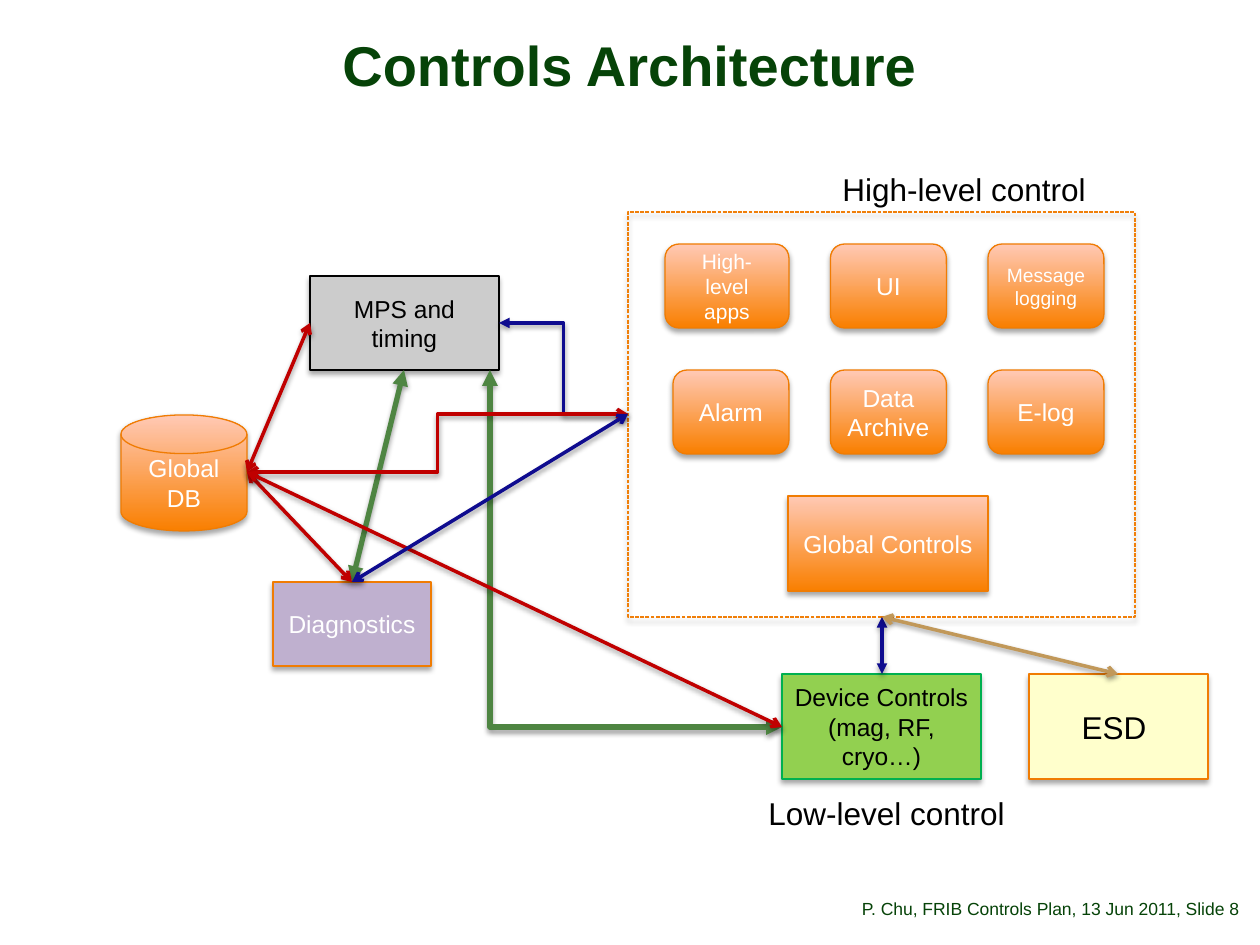
from dataclasses import dataclass

from lxml import etree
from pptx import Presentation
from pptx import util as u
from pptx.dml.color import RGBColor
from pptx.enum import dml, shapes, text
from pptx.oxml.ns import qn
from pptx.slide import Slide

PX_PER_INCH = 126
KIND = shapes.MSO_SHAPE
ALIGN = text.PP_ALIGN
ANCHOR = text.MSO_ANCHOR

ORANGE, BLACK, WHITE = "F07C03", "000000", "FFFFFF"
NAVY, GREEN, RED, TAN = "0F0C8F", "4E8542", "C00000", "C19859"
TITLE_GREEN = "064308"
GLOW = ("F97F00", "FFC9B5")


def px(length):
    return u.Inches(length / PX_PER_INCH)


def rgb(value):
    return RGBColor.from_string(value)


def assign(target, values):
    for name, value in values.items():
        setattr(target, name, value)


def add_shadow(item, alpha, distance):
    effects = etree.SubElement(item._element.spPr, qn("a:effectLst"))
    shadow = etree.SubElement(
        effects, qn("a:outerShdw"), blurRad=str(u.Pt(3.1)),
        dist=str(u.Pt(distance)), dir="5400000", rotWithShape="0")
    color = etree.SubElement(shadow, qn("a:srgbClr"), val=BLACK)
    etree.SubElement(color, qn("a:alpha"), val=str(alpha * 1000))


@dataclass
class Diagram:
    """Holds the text style and the slide being drawn."""

    slide: Slide
    font: str = "Arial"

    def fill_text(self, frame, words, size, color, bold=False, spacing=None,
                  align=ALIGN.CENTER, **frame_format):
        assign(frame, frame_format)
        paragraph = frame.paragraphs[0]
        assign(paragraph, {"alignment": align, "line_spacing": spacing})
        run = paragraph.add_run()
        run.text = words
        assign(run.font, {"name": self.font, "size": u.Pt(size), "bold": bold})
        run.font.color.rgb = rgb(color)

    def label(self, words, left, top, width, height, size=18, color=BLACK,
              margins=None, **text_format):
        box = self.slide.shapes.add_textbox(*map(px, (left, top, width, height)))
        sides = ("left", "top", "right", "bottom")
        if margins:
            assign(box.text_frame, {f"margin_{side}": u.Inches(inset)
                                    for side, inset in zip(sides, margins)})
        self.fill_text(box.text_frame, words, size, color, **text_format)

    def block(self, words, left, top, width, height, kind=KIND.RECTANGLE,
              fill=GLOW, border=ORANGE, color=WHITE, size=14, dash=None):
        """Shadowed shape; a pair of fill colours runs from bottom to top."""
        block = self.slide.shapes.add_shape(
            kind, *map(px, (left, top, width, height)))
        if fill is None:
            block.fill.background()
        elif isinstance(fill, tuple):
            block.fill.gradient()
            block.fill.gradient_angle = 90
            for stop, position, stop_color in zip(
                    block.fill.gradient_stops, (0, 1), fill):
                stop.position = position
                stop.color.rgb = rgb(stop_color)
        else:
            block.fill.solid()
            block.fill.fore_color.rgb = rgb(fill)
        block.line.color.rgb = rgb(border)
        assign(block.line, {"width": u.Pt(0.75), "dash_style": dash})
        add_shadow(block, 35, 1.8)
        if words:
            self.fill_text(block.text_frame, words, size, color, word_wrap=True,
                           vertical_anchor=ANCHOR.MIDDLE)

    def link(self, start, end, color, head="arrow", width=2,
             kind=shapes.MSO_CONNECTOR.STRAIGHT):
        """Line with the same arrowhead at both ends."""
        link = self.slide.shapes.add_connector(kind, *map(px, (*start, *end)))
        link.line.color.rgb = rgb(color)
        link.line.width = u.Pt(width)
        outline = link._element.spPr.find(qn("a:ln"))
        for tag in ("a:headEnd", "a:tailEnd"):
            etree.SubElement(outline, qn(tag), type=head)
        add_shadow(link, 38, 1.6)
        return link

    def elbow(self, start, end, color, **link_format):
        return self.link(start, end, color,
                         kind=shapes.MSO_CONNECTOR.ELBOW, **link_format)

    def corner(self, start, end, color, **link_format):
        """Single bend, down and then right: a frame turned by 270 degrees."""
        (x1, y1), (x2, y2) = start, end
        middle_x, middle_y = (x1 + x2) / 2, (y1 + y2) / 2
        half_width, half_height = (y2 - y1) / 2, (x2 - x1) / 2
        link = self.elbow((middle_x + half_width, middle_y - half_height),
                          (middle_x - half_width, middle_y + half_height),
                          color, **link_format)
        properties = link._element.spPr
        properties.find(qn("a:xfrm")).set("rot", str(270 * 60000))
        properties.find(qn("a:prstGeom")).set("prst", "bentConnector2")


def main():
    deck = Presentation()
    assign(deck, {"slide_width": u.Inches(10), "slide_height": u.Inches(7.5)})
    diagram = Diagram(deck.slides.add_slide(deck.slide_layouts[6]))

    diagram.label("Controls Architecture", 10, 36, 1239, 66, size=32,
                  color=TITLE_GREEN, margins=(0.06, 0.02, 0.06, 0.02),
                  bold=True, spacing=0.88, word_wrap=True,
                  vertical_anchor=ANCHOR.MIDDLE)
    footer = {"size": 10, "color": TITLE_GREEN, "spacing": 0.9,
              "word_wrap": True, "vertical_anchor": ANCHOR.BOTTOM}
    diagram.label("P. Chu, FRIB Controls Plan, 13 Jun 2011", 776, 876, 400, 50,
                  margins=(0, 0.05, 0, 0.05), align=ALIGN.RIGHT, **footer)
    diagram.label(", Slide 8", 1176, 876, 84, 50,
                  margins=(0, 0, 0, 0.05), align=ALIGN.LEFT, **footer)

    diagram.block("Device Controls (mag, RF, cryo…)", 782, 674, 199, 105,
                  fill="92D050", border="00B050", color=BLACK)
    diagram.block("Global DB", 121, 415, 126, 116,
                  kind=KIND.FLOWCHART_MAGNETIC_DISK)
    diagram.block("Diagnostics", 273, 582, 158, 84, fill="BFB0CF")
    diagram.block("MPS and timing", 310, 276, 189, 94, fill="CCCCCC",
                  border=BLACK, color=BLACK)
    diagram.block("Global Controls", 788, 496, 200, 95)

    services = [
        [("High-level apps", 12, 124), ("UI", 14, 116), ("Message logging", 11, 116)],
        [("Alarm", 14, 116), ("Data Archive", 14, 116), ("E-log", 14, 116)],
    ]
    for row, names in enumerate(services):
        for column, (name, size, width) in enumerate(names):
            right = 789 + 157.5 * column
            diagram.block(name, right - width, 244 + 126 * row, width, 84,
                          kind=KIND.ROUNDED_RECTANGLE, size=size)
    diagram.block("", 628, 212, 507, 405, fill=None, border="F07F09",
                  dash=dml.MSO_LINE.SQUARE_DOT)

    database, high_level, high_level_base = (247, 472), (628, 414), (882, 617)
    diagnostics, device = (352, 582), (782, 727)
    thick = {"head": "triangle", "width": 3}
    diagram.link((882, 674), high_level_base, NAVY, head="triangle")
    diagram.link((404, 370), diagnostics, GREEN, **thick)
    diagram.elbow((499, 323), high_level, NAVY, head="triangle")
    diagram.corner((490, 370), device, GREEN, **thick)
    diagram.link(database, (310, 323), RED)
    diagram.elbow(database, high_level, RED)
    diagram.link(database, diagnostics, RED)
    diagram.link(database, device, RED)
    diagram.link(diagnostics, high_level, NAVY)

    diagram.block("ESD ", 1029, 674, 179, 105, fill="FFFFCC", color=BLACK, size=18)
    diagram.link(high_level_base, (1118, 674), TAN)

    level = {"align": ALIGN.LEFT, "word_wrap": False}
    diagram.label("High-level control", 830, 164, 271, 50, **level)
    diagram.label("Low-level control", 756, 788, 265, 50, **level)

    deck.save("out.pptx")


if __name__ == "__main__":
    main()
